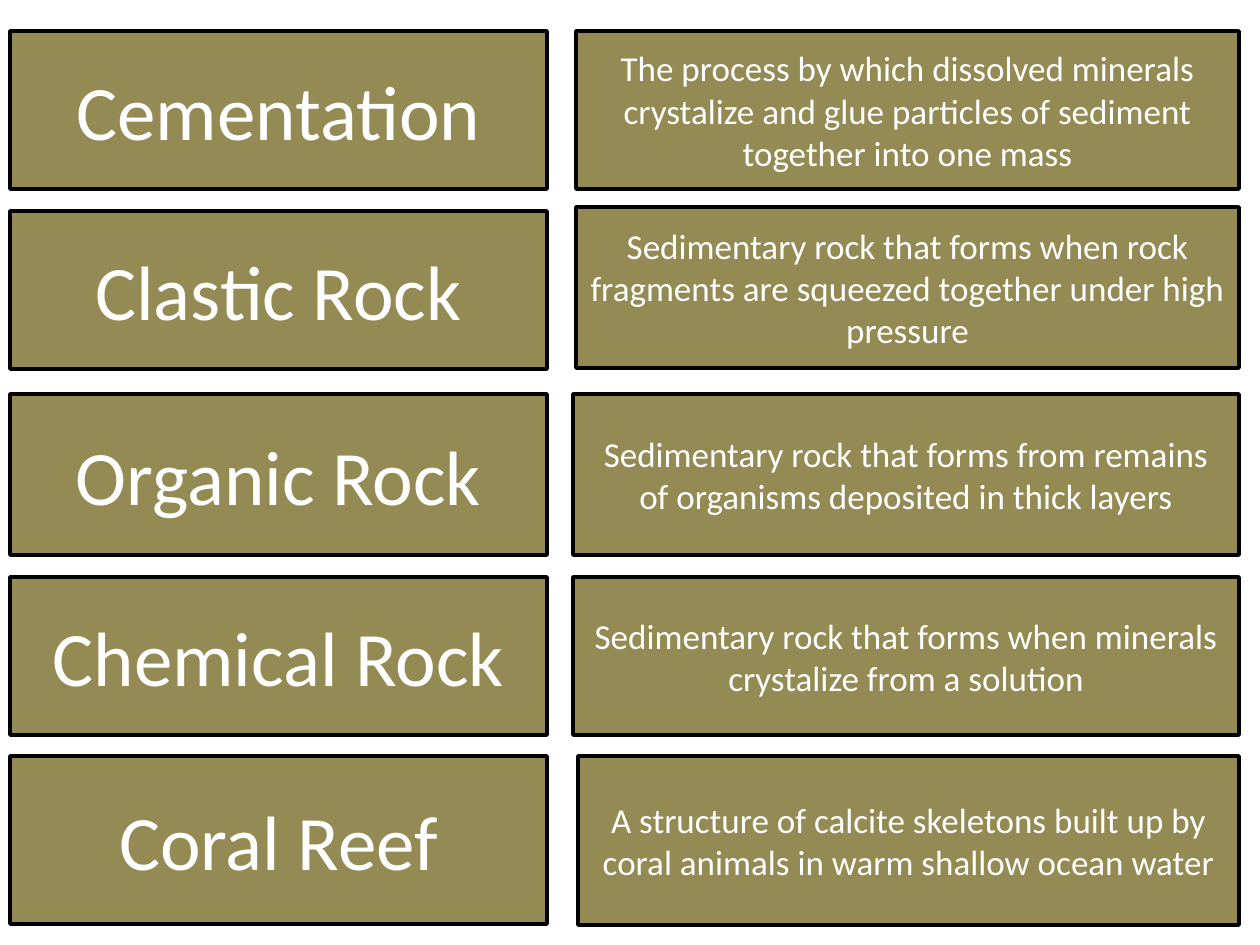
from dataclasses import dataclass

from pptx import Presentation
from pptx.dml.color import RGBColor
from pptx.enum.shapes import MSO_SHAPE
from pptx.enum.text import MSO_ANCHOR, PP_ALIGN
from pptx.slide import Slide
from pptx.util import Emu, Pt

PIXELS_PER_INCH = 126
TERM_LEFT = 10
TERM_WIDTH = 537
DEFINITION_RIGHT = 1239
TERM_SIZE = 44
DEFINITION_SIZE = 20
COLOURS = {"card": "948A54", "outline": "000000", "text": "FFFFFF"}
FRAME_FORMAT = {"word_wrap": True, "vertical_anchor": MSO_ANCHOR.MIDDLE}


@dataclass(frozen=True)
class Card:
    text: str
    left: int
    top: int
    width: int
    height: int
    font_size: int


@dataclass(frozen=True)
class VocabularyRow:
    term: str
    definition: str
    term_top: int
    term_height: int
    definition_left: int
    definition_top: int
    definition_height: int

    def cards(self) -> tuple[Card, Card]:
        return (
            Card(self.term, TERM_LEFT, self.term_top, TERM_WIDTH,
                 self.term_height, TERM_SIZE),
            Card(self.definition, self.definition_left, self.definition_top,
                 DEFINITION_RIGHT - self.definition_left,
                 self.definition_height, DEFINITION_SIZE),
        )


ROWS = [
    VocabularyRow(
        "Cementation",
        "The process by which dissolved minerals crystalize and glue "
        "particles of sediment together into one mass",
        31, 158, 576, 31, 158),
    VocabularyRow(
        "Clastic Rock",
        "Sedimentary rock that forms when rock fragments are squeezed "
        "together under high pressure",
        211, 158, 576, 207, 161),
    VocabularyRow(
        "Organic Rock",
        "Sedimentary rock that forms from remains of organisms deposited "
        "in thick layers",
        394, 161, 573, 394, 161),
    VocabularyRow(
        "Chemical Rock",
        "Sedimentary rock that forms when minerals crystalize from a solution",
        577, 158, 573, 577, 158),
    VocabularyRow(
        "Coral Reef",
        "A structure of calcite skeletons built up by coral animals in warm "
        "shallow ocean water",
        756, 168, 578, 756, 169),
]


def px(length: int) -> Emu:
    return Emu(round(length * 914400 / PIXELS_PER_INCH))


def colour(name: str) -> RGBColor:
    return RGBColor.from_string(COLOURS[name])


def apply_format(target: object, values: dict[str, object]) -> None:
    for name, value in values.items():
        setattr(target, name, value)


def draw_card(slide: Slide, card: Card) -> None:
    shape = slide.shapes.add_shape(
        MSO_SHAPE.FLOWCHART_PROCESS,
        px(card.left), px(card.top), px(card.width), px(card.height))
    shape.shadow.inherit = False
    shape.fill.solid()
    shape.fill.fore_color.rgb = colour("card")
    shape.line.color.rgb = colour("outline")
    shape.line.width = Pt(2)
    apply_format(shape.text_frame, FRAME_FORMAT)
    paragraph = shape.text_frame.paragraphs[0]
    paragraph.alignment = PP_ALIGN.CENTER
    run = paragraph.add_run()
    run.text = card.text
    apply_format(run.font, {"name": "Calibri", "size": Pt(card.font_size)})
    run.font.color.rgb = colour("text")


def main() -> None:
    presentation = Presentation()
    presentation.slide_width = px(1260)
    presentation.slide_height = px(945)
    slide = presentation.slides.add_slide(presentation.slide_layouts[6])
    for row in ROWS:
        for card in row.cards():
            draw_card(slide, card)
    presentation.save("out.pptx")


if __name__ == "__main__":
    main()
